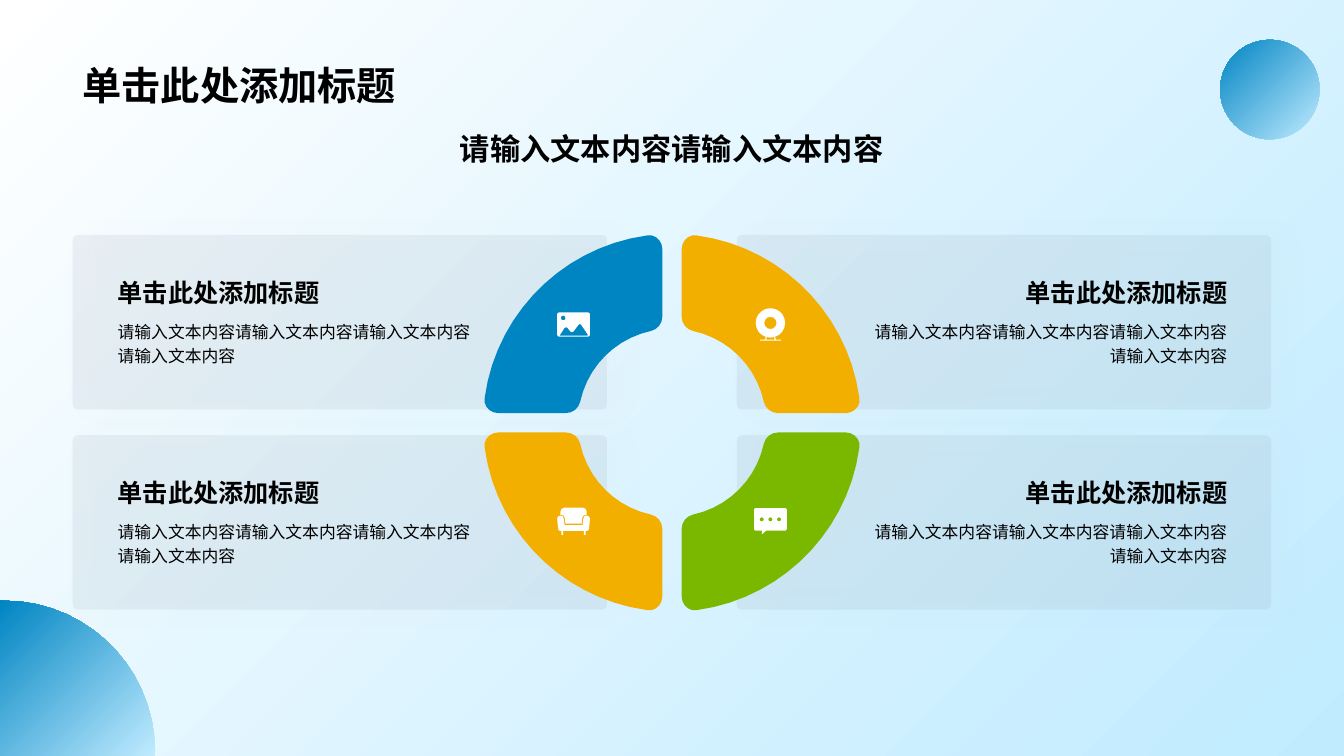
from math import dist, sqrt

from pptx import Presentation
from pptx.dml.color import RGBColor
from pptx.enum.shapes import MSO_SHAPE
from pptx.enum.text import MSO_ANCHOR, PP_ALIGN
from pptx.oxml import parse_xml
from pptx.oxml.ns import nsdecls, qn
from pptx.util import Pt

OVAL, ROUND_RECT = MSO_SHAPE.OVAL, MSO_SHAPE.ROUNDED_RECTANGLE
LEFT, CENTER, RIGHT = PP_ALIGN.LEFT, PP_ALIGN.CENTER, PP_ALIGN.RIGHT
TOP, BOTTOM = MSO_ANCHOR.TOP, MSO_ANCHOR.BOTTOM

BLACK = RGBColor(0, 0, 0)
WHITE = RGBColor(0xFF, 0xFF, 0xFF)
SKY = RGBColor(0xC0, 0xEB, 0xFF)
BLUE = RGBColor(0x00, 0x85, 0xC3)
AMBER = RGBColor(0xF2, 0xAF, 0x00)
GREEN = RGBColor(0x7A, 0xB8, 0x00)
SLATE = RGBColor(0x77, 0x84, 0x95)

TITLE = "单击此处添加标题"
SUBTITLE = "请输入文本内容请输入文本内容"
CARD_TITLE = "单击此处添加标题"
CARD_BODY = "请输入文本内容请输入文本内容请输入文本内容请输入文本内容"

CARDS = [
    (-1, -1, BLUE, "photo"),
    (-1, 1, AMBER, "sofa"),
    (1, -1, AMBER, "webcam"),
    (1, 1, GREEN, "chat"),
]

HUB_X, HUB_Y = 480, 302
ICON_OFFSET = 70.3
CARD_LEFT = {-1: 52, 1: 526.3}
CARD_TOP = {-1: 167.9, 1: 310.9}
CARD_W, CARD_H = 381.6, 124.6
TEXT_LEFT = {-1: 77, 1: 614.5}
TEXT_TOP = {-1: 178.6, 1: 321.4}
TEXT_W, HEAD_H, BODY_H = 269.3, 44.6, 69.8

QUADRANT = [
    (6.9, 75.9), (6.9, 124.1),
    (6.9, 129.9, 12, 135, 17.8, 133.8),
    (78, 125.6, 125.6, 78, 133.8, 17.8),
    (135, 12, 129.9, 6.9, 124.1, 6.9),
    (75.9, 6.9),
    (70.9, 6.9, 66.7, 10.2, 65.6, 15),
    (60, 40.5, 40.5, 60, 15, 65.6),
    (10.2, 66.7, 6.9, 70.9, 6.9, 75.9),
]
CORNER_DISC = [
    (2.9, 429.1), (62.6, 429.1, 110.9, 477.4, 110.9, 537.8),
    (110.9, 540), (0, 540), (0, 429.1),
]
MOUNTAINS = [
    (-10, 8), (-6.5, 2.6), (-6, 2, -5, 1.8, -4.4, 2.4), (-2.4, 5),
    (-1.8, 5.8, -0.6, 5.8, 0, 5), (3.6, 0.2),
    (4, -0.4, 5, -0.4, 5.4, 0.2), (10.2, 7.4), (10, 8),
]
SOFA_BACK = [
    (6.5, -9.7), (8, -9.7, 9.4, -8.3, 9.4, -6.8), (9.4, -4.6),
    (7.4, -4.6, 6.2, -3.8, 6.2, -2.2), (5.8, 1.8), (-5.8, 1.8), (-6.2, -2.2),
    (-6.2, -3.8, -7.4, -4.6, -9.4, -4.6), (-9.4, -6.8),
    (-9.4, -8.3, -8, -9.7, -6.5, -9.7),
]
SOFA_SEAT = [
    (9.4, -4), (10.8, -4, 11.7, -3, 11.7, -1.8), (11, 5.4),
    (10.9, 6.3, 10.5, 6.9, 9.7, 6.9), (8.6, 6.9), (8.6, 9.7), (7.4, 9.7),
    (7.4, 6.9), (-7.4, 6.9), (-7.4, 9.7), (-8.6, 9.7), (-8.6, 6.9), (-9.7, 6.9),
    (-10.5, 6.9, -10.9, 6.3, -11, 5.4), (-11.7, -1.8),
    (-11.7, -3, -10.8, -4, -9.4, -4), (-8, -4, -7, -3.2, -7, -1.8),
    (-6.4, 2.8), (6.4, 2.8), (7, -1.8), (7, -3.2, 8, -4, 9.4, -4),
]
WEBCAM_STAND = [
    (-3.2, 9.1), (-4, 10.9), (-7.5, 10.9), (-7.5, 11.7), (7.5, 11.7),
    (7.5, 10.9), (4, 10.9), (3.2, 9.1), (2.6, 9.4), (3.1, 10.9),
    (-3.1, 10.9), (-2.6, 9.4),
]
CHAT_TAIL = [(-6, 6.8), (-3.2, 6.8), (-6, 9.4)]


def rounded(left, top, right, bottom, radius):
    k = radius * 0.45
    return [
        (left + radius, top), (right - radius, top),
        (right - k, top, right, top + k, right, top + radius),
        (right, bottom - radius),
        (right, bottom - k, right - k, bottom, right - radius, bottom),
        (left + radius, bottom),
        (left + k, bottom, left, bottom - k, left, bottom - radius),
        (left, top + radius),
        (left, top + k, left + k, top, left + radius, top),
    ]


def disc(x, y, radius):
    return rounded(x - radius, y - radius, x + radius, y + radius, radius)


ICONS = {
    "photo": [rounded(-11.7, -8.5, 11.7, 8.7, 1.3), MOUNTAINS, disc(-7.4, -4.6, 1.7)],
    "sofa": [SOFA_BACK, SOFA_SEAT],
    "webcam": [disc(0, -1, 10.5), disc(0, -1, 4.4), WEBCAM_STAND],
    "chat": [rounded(-11.7, -9.4, 11.7, 6.8, 1.3), CHAT_TAIL]
    + [disc(x, -1.3, 1.5) for x in (-6.2, 0, 6.2)],
}


def flatten(contour):
    points = [contour[0]]
    for step in contour[1:]:
        if len(step) == 2:
            if step != points[-1]:
                points.append(step)
            continue
        anchors = [points[-1], step[:2], step[2:4], step[4:]]
        count = max(2, round(1.2 * sqrt(dist(anchors[0], anchors[3]))))
        for i in range(1, count + 1):
            t = i / count
            weights = ((1 - t) ** 3, 3 * t * (1 - t) ** 2, 3 * t * t * (1 - t), t ** 3)
            points.append(tuple(
                sum(w * a[axis] for w, a in zip(weights, anchors)) for axis in (0, 1)
            ))
    return points


def add_outline(page, contours, x=0, y=0, flip_x=1, flip_y=1):
    builder = None
    for contour in contours:
        points = [(Pt(x + flip_x * px), Pt(y + flip_y * py)) for px, py in flatten(contour)]
        if builder is None:
            builder = page.shapes.build_freeform(*points[0], scale=1.0)
        else:
            builder.move_to(*points[0])
        builder.add_line_segments(points[1:], close=True)
    shape = builder.convert_to_shape()
    shape.shadow.inherit = False
    shape.line.fill.background()
    return shape


def paint(shape, color):
    shape.fill.solid()
    shape.fill.fore_color.rgb = color


def blend(fill, start, end):
    fill.gradient()
    fill.gradient_angle = 135
    for stop, color in zip(fill.gradient_stops, (start, end)):
        stop.color.rgb = color


def add_preset(page, kind, left, top, width, height):
    shape = page.shapes.add_shape(kind, Pt(left), Pt(top), Pt(width), Pt(height))
    shape.shadow.inherit = False
    shape.line.fill.background()
    return shape


def add_card(page, left, top):
    card = add_preset(page, ROUND_RECT, left, top, CARD_W, CARD_H)
    card.adjustments[0] = 0.03
    paint(card, SLATE)
    properties = card._element.spPr
    color = properties.find(qn("a:solidFill"))[0]
    color.append(parse_xml(f'<a:alpha {nsdecls("a")} val="10000"/>'))
    properties.find(qn("a:effectLst")).append(parse_xml(
        f'<a:outerShdw {nsdecls("a")} blurRad="{Pt(20)}" dist="{Pt(10)}" dir="0">'
        '<a:srgbClr val="A6A6A6"><a:alpha val="20000"/></a:srgbClr></a:outerShdw>'
    ))


def add_text(page, text, left, top, width, height, size, bold=True,
             align=LEFT, anchor=BOTTOM, spacing=1.0):
    box = page.shapes.add_textbox(Pt(left), Pt(top), Pt(width), Pt(height))
    frame = box.text_frame
    frame.word_wrap = True
    frame.vertical_anchor = anchor
    para = frame.paragraphs[0]
    para.text, para.alignment, para.line_spacing = text, align, spacing
    font = para.font
    font.name, font.size, font.bold = "Arial", Pt(size), bold
    font.color.rgb = BLACK


deck = Presentation()
deck.slide_width, deck.slide_height = Pt(960), Pt(540)
page = deck.slides.add_slide(deck.slide_layouts[6])
blend(page.background.fill, SKY, WHITE)
blend(add_outline(page, [CORNER_DISC]).fill, SKY, BLUE)
blend(add_preset(page, OVAL, 871.5, 28.5, 71, 71).fill, SKY, BLUE)
for side, row, _, _ in CARDS:
    add_card(page, CARD_LEFT[side], CARD_TOP[row])
add_text(page, SUBTITLE, 52, 89.3, 855.6, 36, 21.6, align=CENTER, anchor=TOP)
for side, row, color, icon in CARDS:
    paint(add_outline(page, [QUADRANT], HUB_X, HUB_Y, side, row), color)
    center = HUB_X + side * ICON_OFFSET, HUB_Y + row * ICON_OFFSET
    paint(add_outline(page, ICONS[icon], *center), WHITE)
    align = LEFT if side < 0 else RIGHT
    left, top = TEXT_LEFT[side], TEXT_TOP[row]
    add_text(page, CARD_TITLE, left, top, TEXT_W, HEAD_H, 18, align=align)
    add_text(page, CARD_BODY, left, top + HEAD_H, TEXT_W, BODY_H, 12,
             bold=False, align=align, anchor=TOP, spacing=1.2)
add_text(page, TITLE, 52, 10.1, 855.6, 70.6, 28)
deck.save("out.pptx")
